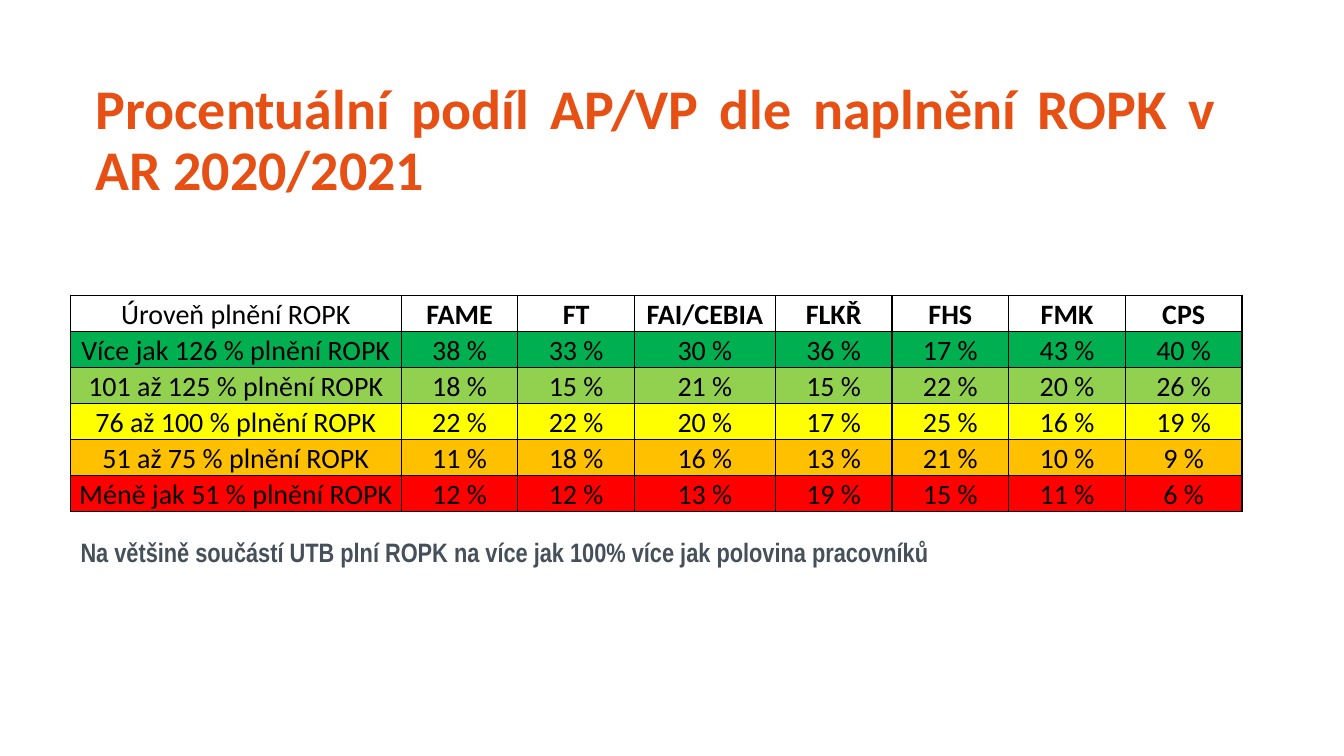
from lxml.etree import SubElement
from pptx import Presentation
from pptx.dml.color import RGBColor
from pptx.enum.text import MSO_ANCHOR as Anchor, PP_ALIGN as Align
from pptx.oxml.ns import qn
from pptx.util import Cm, Pt

ORANGE = RGBColor(0xE6, 0x50, 0x14)
SLATE = RGBColor(0x46, 0x50, 0x5A)
BLACK = RGBColor(0x00, 0x00, 0x00)
GREEN = RGBColor(0x00, 0xB0, 0x50)
LIME = RGBColor(0x92, 0xD0, 0x50)
YELLOW = RGBColor(0xFF, 0xFF, 0x00)
AMBER = RGBColor(0xFF, 0xC0, 0x00)
RED = RGBColor(0xFF, 0x00, 0x00)

TITLE = "Procentuální podíl AP/VP dle naplnění ROPK v AR 2020/2021"
NOTE = "Na většině součástí UTB plní ROPK na více jak 100% více jak polovina pracovníků"
FACULTIES = ["FAME", "FT", "FAI/CEBIA", "FLKŘ", "FHS", "FMK", "CPS"]
LEVELS = [
    ("Více jak 126 %", GREEN, [38, 33, 30, 36, 17, 43, 40]),
    ("101 až 125 %", LIME, [18, 15, 21, 15, 22, 20, 26]),
    ("76 až 100 %", YELLOW, [22, 22, 20, 17, 25, 16, 19]),
    ("51 až 75 %", AMBER, [11, 18, 16, 13, 21, 10, 9]),
    ("Méně jak 51 %", RED, [12, 12, 13, 19, 15, 11, 6]),
]
LEVEL_WIDTH, FACULTY_WIDTH, WIDE_FACULTY_WIDTH = Cm(8.33), Cm(2.94), Cm(3.55)
ROW_HEIGHT = Cm(0.88)


def format_text(para, font_name, size, color, bold):
    for span in para.runs:
        span.font.name = font_name
        span.font.size = Pt(size)
        span.font.color.rgb = color
        span.font.bold = bold


def add_text(slide, text, left, top, width, height, font_name, size, color):
    box = slide.shapes.add_textbox(left, top, width, height)
    box.text_frame.word_wrap = True
    box.text_frame.text = text
    format_text(box.text_frame.paragraphs[0], font_name, size, color, True)
    return box.text_frame


def add_borders(cell):
    properties = cell._tc.get_or_add_tcPr()
    for side in ("a:lnL", "a:lnR", "a:lnT", "a:lnB"):
        line = SubElement(properties, qn(side), w=str(Pt(1)))
        fill = SubElement(line, qn("a:solidFill"))
        SubElement(fill, qn("a:srgbClr"), val=str(BLACK))


def fill_cell(cell, text, color=None, bold=False):
    add_borders(cell)
    if color is None:
        cell.fill.background()
    else:
        cell.fill.solid()
        cell.fill.fore_color.rgb = color
    cell.margin_left = cell.margin_right = Cm(0.13)
    cell.margin_top = cell.margin_bottom = 0
    cell.vertical_anchor = Anchor.BOTTOM
    para = cell.text_frame.paragraphs[0]
    para.text = text
    para.alignment = Align.CENTER
    para.line_spacing = 1.07
    format_text(para, "Calibri", 20, BLACK, bold)


def add_level_table(slide, left, top):
    widths = [LEVEL_WIDTH] + [
        WIDE_FACULTY_WIDTH if name == "FAI/CEBIA" else FACULTY_WIDTH
        for name in FACULTIES
    ]
    row_count = len(LEVELS) + 1
    table = slide.shapes.add_table(
        row_count, len(widths), left, top, sum(widths), ROW_HEIGHT * row_count
    ).table
    table.horz_banding = False
    table.first_row = False
    for column, width in zip(table.columns, widths):
        column.width = width

    # Header row
    fill_cell(table.cell(0, 0), "Úroveň plnění ROPK")
    for col, name in enumerate(FACULTIES, start=1):
        fill_cell(table.cell(0, col), name, bold=True)

    # One coloured row per level
    for row, (level, color, shares) in enumerate(LEVELS, start=1):
        fill_cell(table.cell(row, 0), f"{level} plnění ROPK", color)
        for col, share in enumerate(shares, start=1):
            fill_cell(table.cell(row, col), f"{share} %", color)


def main():
    deck = Presentation()
    deck.slide_width, deck.slide_height = Cm(33.87), Cm(19.05)
    slide = deck.slides.add_slide(deck.slide_layouts[6])

    # Title
    title = add_text(slide, TITLE, Cm(2.16), Cm(1.73), Cm(28.73), Cm(3.68),
                     "Calibri", 40, ORANGE)
    title.vertical_anchor = Anchor.MIDDLE
    heading = title.paragraphs[0]
    heading.alignment = Align.JUSTIFY
    heading.line_spacing = 0.9
    heading.space_after = Pt(6)

    # Shares by level and faculty
    add_level_table(slide, Cm(1.78), Cm(7.44))

    # Conclusion
    add_text(slide, NOTE, Cm(1.78), Cm(13.39), Cm(27.46), Cm(1.88),
             "Arial Narrow", 19, SLATE)

    deck.save("out.pptx")


if __name__ == "__main__":
    main()
